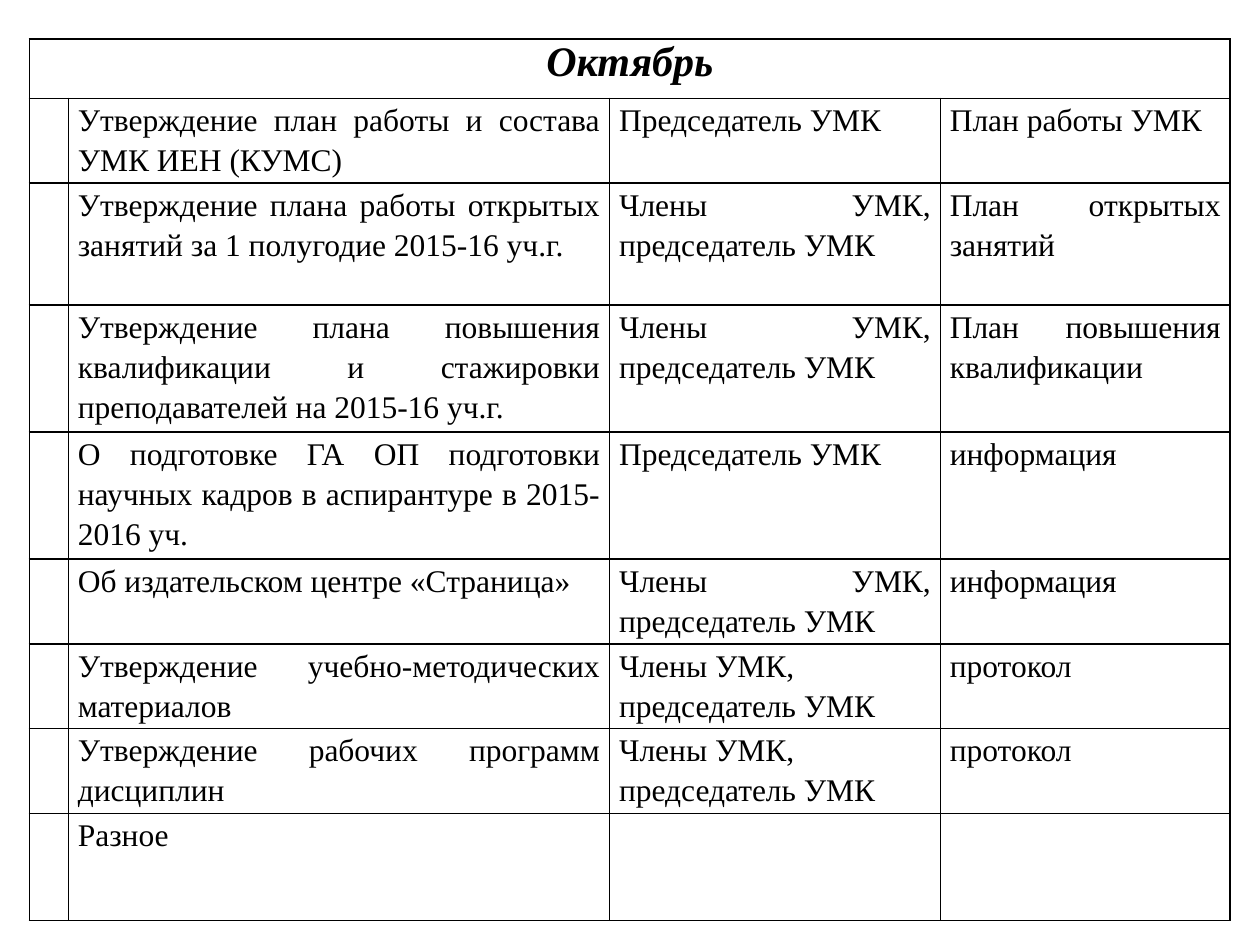
from lxml.etree import SubElement
from pptx import Presentation
from pptx.dml.color import RGBColor
from pptx.enum.text import PP_ALIGN
from pptx.oxml.ns import qn
from pptx.util import Pt

COLORS = {"ink": "000000", "paper": "FFFFFF"}
FONT = "Times New Roman"
MEMBERS = "Члены УМК, председатель УМК"
CHAIR = "Председатель УМК"

# Task, responsible, result, alignment of the responsible column
JUSTIFY, LEFT = PP_ALIGN.JUSTIFY, PP_ALIGN.LEFT
AGENDA = [
    ("Утверждение план работы и состава УМК ИЕН (КУМС)", CHAIR, "План работы УМК", JUSTIFY),
    ("Утверждение плана работы открытых занятий за 1 полугодие 2015-16 уч.г.",
     MEMBERS, "План открытых занятий", JUSTIFY),
    ("Утверждение плана повышения квалификации и стажировки преподавателей на 2015-16 уч.г.",
     MEMBERS, "План повышения квалификации", JUSTIFY),
    ("О подготовке ГА ОП подготовки научных кадров в аспирантуре в 2015-2016 уч.",
     CHAIR, "информация", JUSTIFY),
    ("Об издательском центре «Страница»", MEMBERS, "информация", JUSTIFY),
    ("Утверждение учебно-методических материалов", MEMBERS, "протокол", LEFT),
    ("Утверждение рабочих программ дисциплин", MEMBERS, "протокол", LEFT),
    ("Разное", "", "", JUSTIFY),
]
COLUMN_WIDTHS = [22.3, 309.3, 189, 165.6]
ROW_HEIGHTS = [33.8, 48.4, 69.8, 72.6, 72.6, 48.4, 48.4, 48.4, 61.2]


def write(cell, text, size=18, align=JUSTIFY, spacing=1.15, inset=5.4, bold=False, italic=False):
    cell.margin_left = cell.margin_right = Pt(inset)
    cell.margin_top = cell.margin_bottom = Pt(0)
    paragraph = cell.text_frame.paragraphs[0]
    paragraph.alignment = align
    paragraph.line_spacing = spacing
    run = paragraph.add_run()
    run.text = text
    run.font.name = FONT
    run.font.size = Pt(size)
    run.font.bold = bold
    run.font.italic = italic
    run.font.color.rgb = RGBColor.from_string(COLORS["ink"])


def frame(cell):
    """Draw a thin line on all four sides and fill the cell."""
    properties = cell._tc.get_or_add_tcPr()
    for side in ("a:lnL", "a:lnR", "a:lnT", "a:lnB"):
        line = SubElement(properties, qn(side), w=str(Pt(1)))
        solid = SubElement(line, qn("a:solidFill"))
        SubElement(solid, qn("a:srgbClr"), val=COLORS["ink"])
    cell.fill.solid()
    cell.fill.fore_color.rgb = RGBColor.from_string(COLORS["paper"])


presentation = Presentation()
presentation.slide_width, presentation.slide_height = Pt(720), Pt(540)
slide = presentation.slides.add_slide(presentation.slide_layouts[6])

plan = slide.shapes.add_table(
    len(ROW_HEIGHTS), len(COLUMN_WIDTHS),
    Pt(16.8), Pt(22.4), Pt(sum(COLUMN_WIDTHS)), Pt(sum(ROW_HEIGHTS)),
).table
plan.first_row = plan.horz_banding = False
for column, width in zip(plan.columns, COLUMN_WIDTHS):
    column.width = Pt(width)
for row, height in zip(plan.rows, ROW_HEIGHTS):
    row.height = Pt(height)
    for cell in row.cells:
        frame(cell)

month = plan.cell(0, 0)
month.merge(plan.cell(0, len(COLUMN_WIDTHS) - 1))
write(month, "Октябрь", size=24, align=PP_ALIGN.CENTER, spacing=1, inset=3.6,
      bold=True, italic=True)

for number, (task, responsible, result, responsible_align) in enumerate(AGENDA, start=1):
    aligned = [(task, JUSTIFY), (responsible, responsible_align), (result, JUSTIFY)]
    for position, (text, align) in enumerate(aligned, start=1):
        if text:
            write(plan.cell(number, position), text, align=align)

presentation.save("out.pptx")
